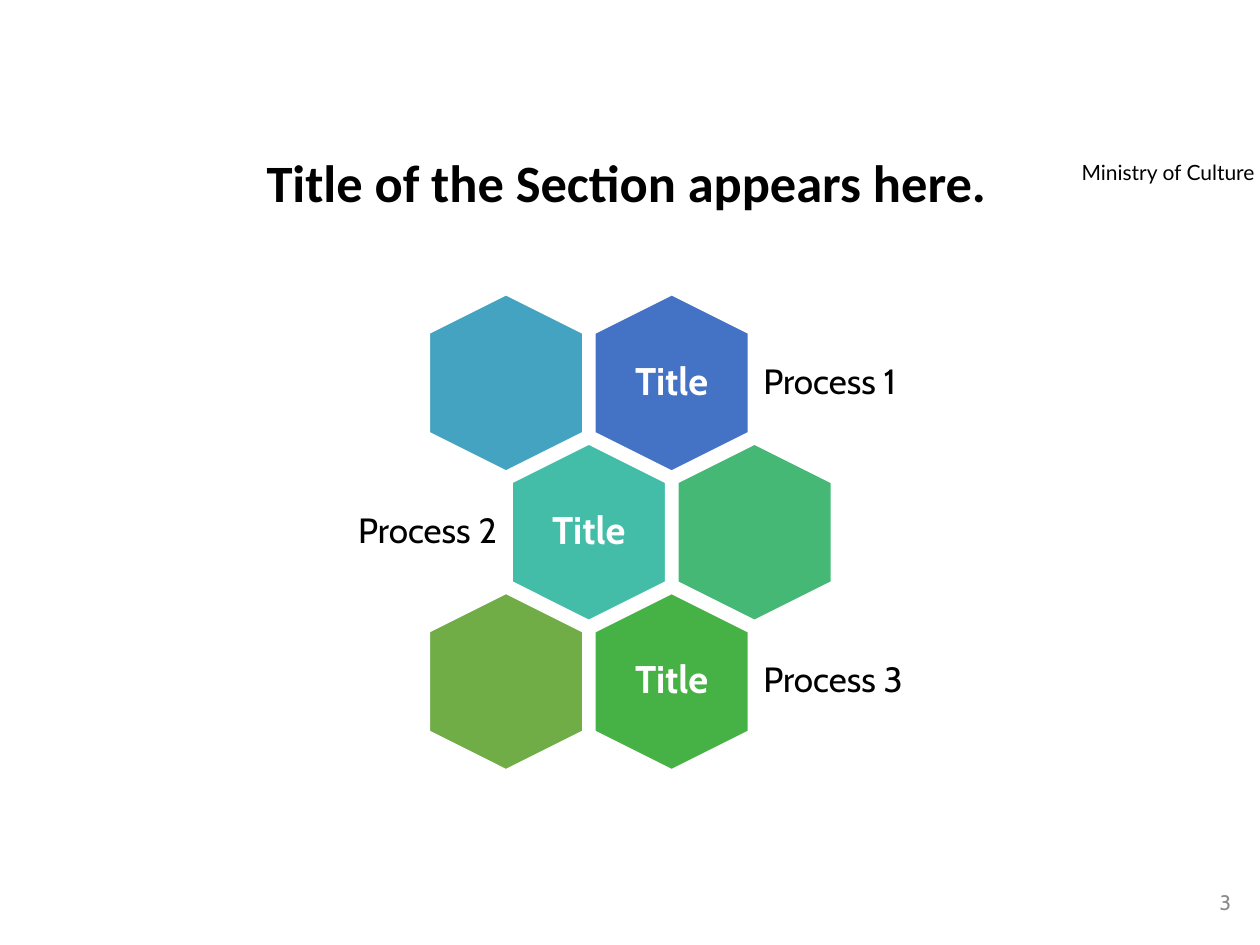
from pptx import Presentation
from pptx.dml.color import RGBColor
from pptx.enum import shapes, text
from pptx.util import Cm, Pt

BLACK = RGBColor(0x00, 0x00, 0x00)
WHITE = RGBColor(0xFF, 0xFF, 0xFF)
GREY = RGBColor(0x8C, 0x8C, 0x8C)
BLUE = RGBColor(0x44, 0x72, 0xC4)
SKY = RGBColor(0x44, 0xA3, 0xC0)
TEAL = RGBColor(0x43, 0xBD, 0xA7)
MINT = RGBColor(0x44, 0xB8, 0x74)
GREEN = RGBColor(0x46, 0xB2, 0x46)
OLIVE = RGBColor(0x70, 0xAD, 0x47)

LEFT, CENTER, RIGHT = text.PP_ALIGN.LEFT, text.PP_ALIGN.CENTER, text.PP_ALIGN.RIGHT
TOP, MIDDLE = text.MSO_ANCHOR.TOP, text.MSO_ANCHOR.MIDDLE

# Hexagon colours from left to right, column of the titled one, and its label
ROWS = [
    ((SKY, BLUE), 1, "Process 1"),
    ((TEAL, MINT), 0, "Process 2"),
    ((OLIVE, GREEN), 1, "Process 3"),
]
HEX_LENGTH, HEX_WIDTH = Cm(3.56), Cm(3.1)
COLUMN_PITCH, ROW_PITCH = Cm(3.34), Cm(3.01)
LABEL_WIDTH, LABEL_HEIGHT, LABEL_OFFSET = Cm(3.9), Cm(2.13), Cm(1.65)
TITLE_WIDTH, TITLE_HEIGHT = Cm(2.13), Cm(2.44)


def write(box, words, font, size, color, align, anchor=MIDDLE, bold=False,
          spacing=None, inset=None):
    frame = box.text_frame
    frame.word_wrap = True
    frame.auto_size = text.MSO_AUTO_SIZE.NONE
    frame.vertical_anchor = anchor
    if inset is not None:
        frame.margin_left = frame.margin_right = inset
    para = frame.paragraphs[0]
    para.text = words
    para.alignment = align
    para.line_spacing = spacing
    para.font.name = font
    para.font.size = Pt(size)
    para.font.bold = bold
    para.font.color.rgb = color


def add_hexagon(page, center_x, center_y, color):
    hexagon = page.shapes.add_shape(
        shapes.MSO_SHAPE.HEXAGON, center_x - HEX_LENGTH // 2,
        center_y - HEX_WIDTH // 2, HEX_LENGTH, HEX_WIDTH)
    hexagon.rotation = 90
    hexagon.adjustments[0] = 0.25
    hexagon.shadow.inherit = False
    hexagon.fill.solid()
    hexagon.fill.fore_color.rgb = color
    hexagon.line.color.rgb = WHITE
    hexagon.line.width = Pt(1)


def add_honeycomb(page, left, top):
    """Stack the rows, each odd one shifted by half a column."""
    for row, (colors, titled, label) in enumerate(ROWS):
        first_x = left + HEX_WIDTH // 2 + row % 2 * COLUMN_PITCH // 2
        center_y = top + HEX_LENGTH // 2 + row * ROW_PITCH
        for column, color in enumerate(colors):
            add_hexagon(page, first_x + column * COLUMN_PITCH, center_y, color)

        center_x = first_x + titled * COLUMN_PITCH
        title = page.shapes.add_textbox(
            center_x - TITLE_WIDTH // 2, center_y - TITLE_HEIGHT // 2,
            TITLE_WIDTH, TITLE_HEIGHT)
        write(title, "Title", "Cabin", 22, WHITE, CENTER, bold=True,
              spacing=0.9, inset=0)

        if titled:
            label_left, align = center_x + LABEL_OFFSET, LEFT
        else:
            label_left, align = center_x - LABEL_OFFSET - LABEL_WIDTH, RIGHT
        process = page.shapes.add_textbox(
            label_left, center_y - LABEL_HEIGHT // 2, LABEL_WIDTH, LABEL_HEIGHT)
        write(process, label, "Cabin", 20, BLACK, align, spacing=0.9,
              inset=Cm(0.2))


def add_heading(page, left, top, width, height):
    heading = page.shapes.title
    heading.left, heading.top = left, top
    heading.width, heading.height = width, height
    write(heading, "Title of the Section appears here.", "Calibri", 30, BLACK,
          CENTER, TOP, bold=True, spacing=0.9)


def add_ministry(page, left, top, width, height):
    ministry = page.shapes.add_textbox(left, top, width, height)
    write(ministry, "Ministry of Culture", "Lato", 12, BLACK, CENTER, TOP, inset=0)


def add_page_number(page, left, top, width, height):
    number = page.shapes.add_textbox(left, top, width, height)
    write(number, "3", "Cabin", 12, GREY, RIGHT)


def main():
    deck = Presentation()
    deck.slide_width, deck.slide_height = Cm(25.4), Cm(19.05)
    page = deck.slides.add_slide(deck.slide_layouts[5])
    add_ministry(page, Cm(21.7), Cm(3.1), Cm(3.7), Cm(0.77))
    add_honeycomb(page, Cm(8.65), Cm(5.94))
    add_page_number(page, Cm(19.35), Cm(17.68), Cm(5.72), Cm(1.02))
    add_heading(page, Cm(3.2), Cm(3.05), Cm(18.87), Cm(2))
    deck.save("out.pptx")


if __name__ == "__main__":
    main()
